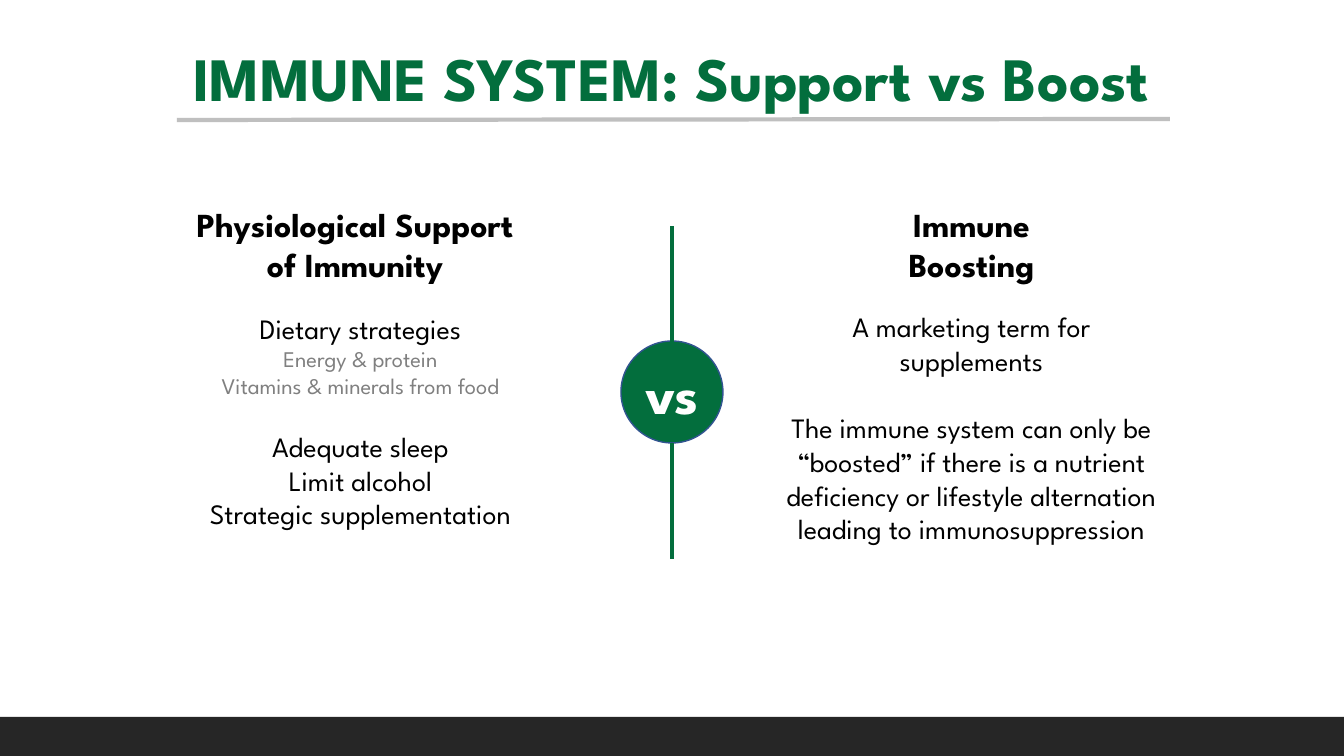
from pptx import Presentation
from pptx.dml.color import RGBColor
from pptx.enum.shapes import MSO_CONNECTOR, MSO_SHAPE
from pptx.enum.text import MSO_ANCHOR, MSO_AUTO_SIZE, PP_ALIGN
from pptx.oxml.ns import qn
from pptx.util import Emu, Pt
from lxml.etree import SubElement

W, H = 1344, 756
SCALE = 12192000 / W
FONT = "League Spartan"
COLORS = {"green": "036E3D", "black": "000000", "grey": "808080", "white": "FFFFFF",
          "footer": "262626", "rule": "BFBFBF", "outline": "325491"}


def px(*lengths):
    return [Emu(round(n * SCALE)) for n in lengths]


def color(name):
    return RGBColor.from_string(COLORS[name])


prs = Presentation()
prs.slide_width, prs.slide_height = px(W, H)
s = prs.slides.add_slide(prs.slide_layouts[6])

footer = s.shapes.add_shape(MSO_SHAPE.RECTANGLE, *px(0, 717, W, 39))
footer.line.fill.background()
badge = s.shapes.add_shape(MSO_SHAPE.OVAL, *px(621, 341, 102, 102))
badge.line.color.rgb = color("outline")
badge.line.width = Pt(1)
for sp, fill in ((footer, "footer"), (badge, "green")):
    sp.shadow.inherit = False
    sp.fill.solid()
    sp.fill.fore_color.rgb = color(fill)

# Paragraph: text, size, colour, bold, space before in points
TEXTS = [
    ((0, 34, W, 85), MSO_ANCHOR.BOTTOM, [
        ("IMMUNE SYSTEM: Support vs Boost", 44, "green", True, 0)]),
    ((177, 199, 356, 92), MSO_ANCHOR.TOP, [
        ("Physiological Support of Immunity", 24, "black", True, 0)]),
    ((858, 199, 227, 92), MSO_ANCHOR.TOP, [
        ("Immune Boosting", 24, "black", True, 0)]),
    ((166, 307, 389, 238), MSO_ANCHOR.TOP, [
        ("Dietary strategies", 20, "black", False, 0),
        ("Energy & protein", 16, "grey", False, 0),
        ("Vitamins & minerals from food", 16, "grey", False, 0),
        ("Adequate sleep", 20, "black", False, 21.6),
        ("Limit alcohol", 20, "black", False, 0),
        ("Strategic supplementation", 20, "black", False, 0)]),
    ((773, 305, 397, 281), MSO_ANCHOR.TOP, [
        ("A marketing term for supplements", 20, "black", False, 0),
        ("The immune system can only be “boosted” if there is a nutrient deficiency "
         "or lifestyle alternation leading to immunosuppression", 20, "black", False, 24)]),
    ((613, 354, 118, 78), MSO_ANCHOR.TOP, [
        ("vs", 40, "white", True, 0)]),
]
for box, anchor, paragraphs in TEXTS:
    tf = s.shapes.add_textbox(*px(*box)).text_frame
    tf.word_wrap = True
    tf.auto_size = MSO_AUTO_SIZE.SHAPE_TO_FIT_TEXT
    tf.vertical_anchor = anchor
    for i, (text, size, name, bold, before) in enumerate(paragraphs):
        p = tf.add_paragraph() if i else tf.paragraphs[0]
        p.alignment = PP_ALIGN.CENTER
        p.space_before = Pt(before)
        r = p.add_run()
        r.text = text
        r.font.name = FONT
        r.font.size = Pt(size)
        r.font.bold = bold
        r.font.color.rgb = color(name)

LINES = [
    ((672, 342, 672, 226), "green"),
    ((672, 559, 672, 443), "green"),
    ((177, 120, 1170, 119), "rule"),
]
for ends, name in LINES:
    line = s.shapes.add_connector(MSO_CONNECTOR.STRAIGHT, *px(*ends))
    line.line.color.rgb = color(name)
    line.line.width = Pt(3)
    SubElement(line._element.spPr, qn("a:effectLst"))

prs.save("out.pptx")
